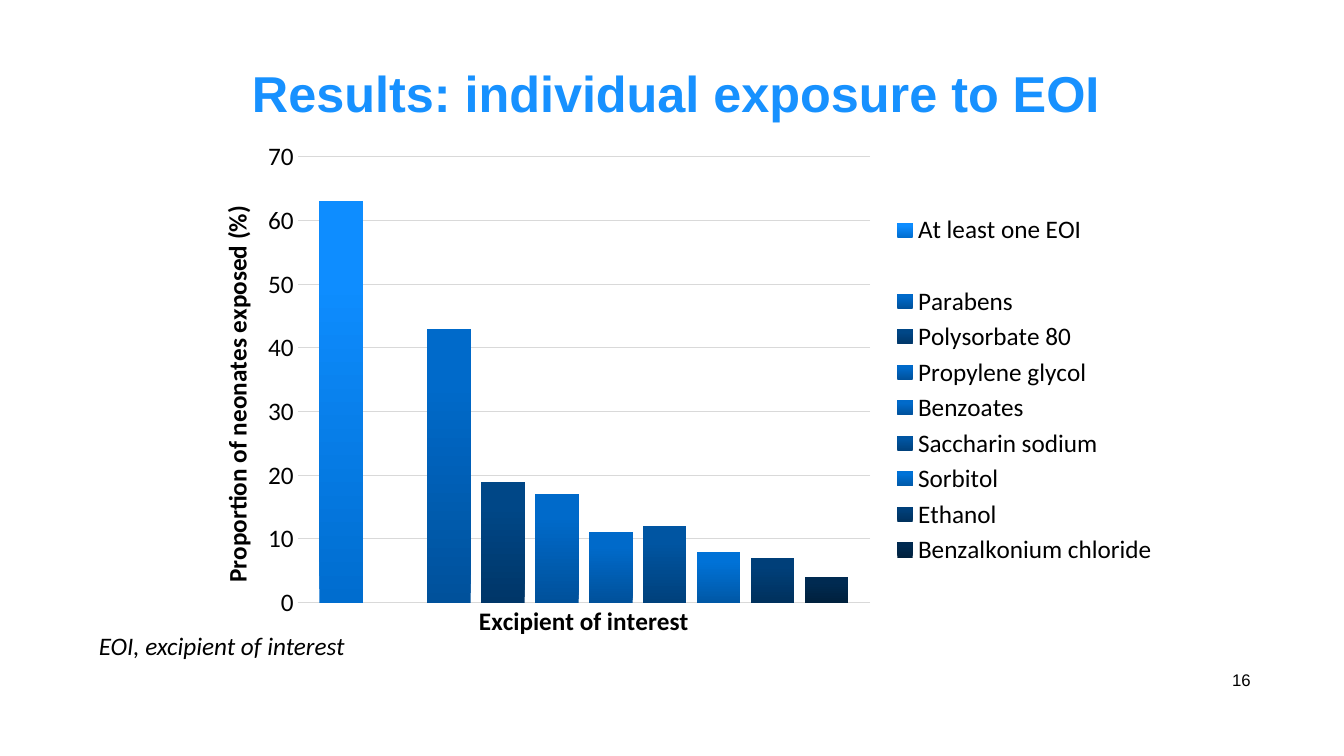
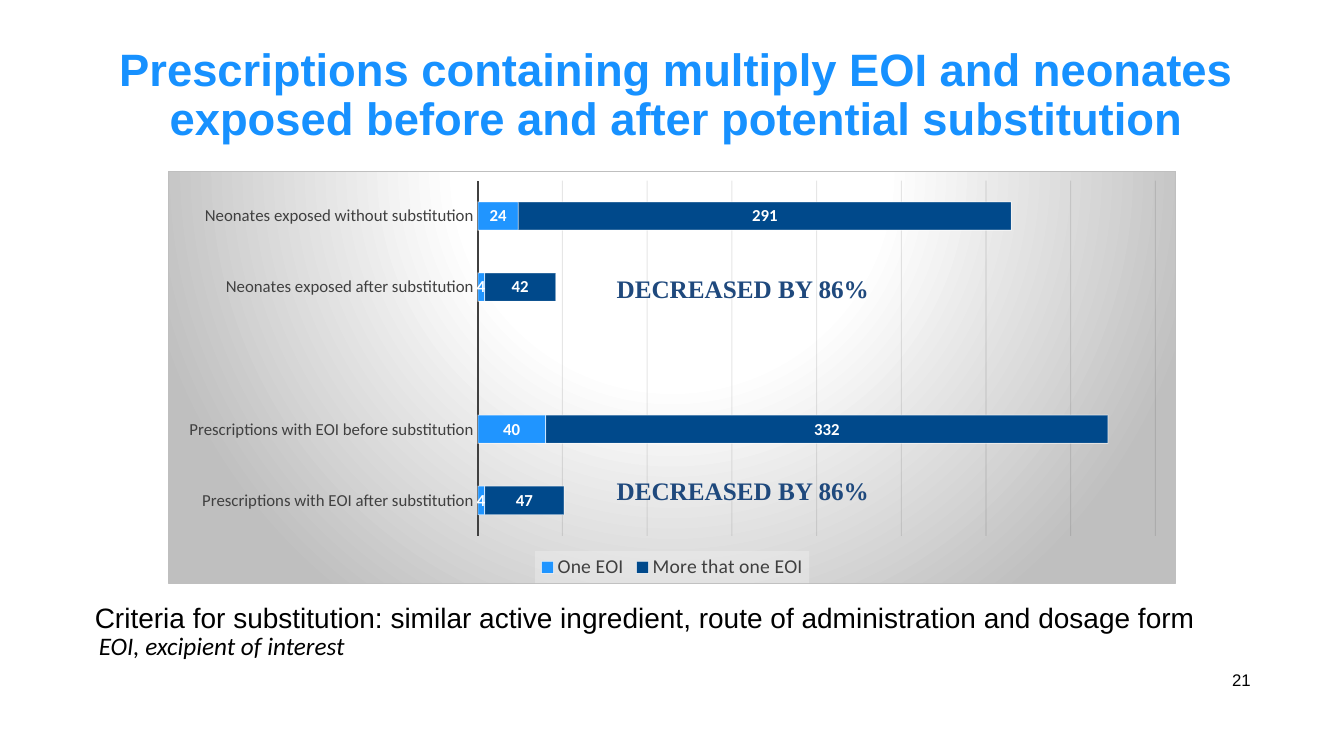
from lxml import etree
from pptx import Presentation
from pptx.chart.data import CategoryChartData
from pptx.dml.color import RGBColor
from pptx.enum.chart import (XL_CHART_TYPE, XL_LABEL_POSITION,
                             XL_LEGEND_POSITION, XL_TICK_MARK)
from pptx.enum.text import MSO_ANCHOR, MSO_AUTO_SIZE, PP_ALIGN
from pptx.oxml import parse_xml
from pptx.oxml.ns import nsdecls, qn
from pptx.util import Cm, Pt

COLUMN, STACKED = XL_CHART_TYPE.COLUMN_CLUSTERED, XL_CHART_TYPE.BAR_STACKED
RIGHT, BOTTOM = XL_LEGEND_POSITION.RIGHT, XL_LEGEND_POSITION.BOTTOM
MID_LABEL, NO_TICK = XL_LABEL_POSITION.CENTER, XL_TICK_MARK.NONE
MIDDLE, TOP = MSO_ANCHOR.MIDDLE, MSO_ANCHOR.TOP
NO_FIT = MSO_AUTO_SIZE.NONE
LEFT_AL, MID_AL, RIGHT_AL = PP_ALIGN.LEFT, PP_ALIGN.CENTER, PP_ALIGN.RIGHT

COLORS = {
    "title": "1791FF", "text": "000000", "label": "404040", "navy": "1F497D",
    "grid": "D9D9D9", "mesh": "0D0D0D", "edge": "BFBFBF", "pale": "F2F2F2",
    "white": "FFFFFF", "one": "2095FF", "more": "00498B",
}
MID_BLUE = ("00519B", "006ACA")
EXPOSED = [  # name, percent, bottom and top colour
    ("At least one EOI", 63, ("006DCF", "0E8DFF")),
    (" ", None, None),
    ("Parabens", 43, MID_BLUE),
    ("Polysorbate 80", 19, ("003668", "004787")),
    ("Propylene glycol", 17, MID_BLUE),
    ("Benzoates", 11, MID_BLUE),
    ("Saccharin sodium", 12, ("00417C", "0055A2")),
    ("Sorbitol", 8, ("0058A6", "0072D7")),
    ("Ethanol", 7, ("00315D", "003F79")),
    ("Benzalkonium chloride", 4, ("00213E", "002A51")),
]
GROUPS = [
    "Prescriptions with EOI after substitution",
    "Prescriptions with EOI before substitution",
    "",
    "Neonates exposed after substitution",
    "Neonates exposed without substitution",
]
COUNTS = [
    ("One EOI", [4, 40, None, 4, 24], "one"),
    ("More that one EOI", [47, 332, None, 42, 291], "more"),
]


def rgb(name):
    return RGBColor.from_string(COLORS[name])


def style(font, size, color="text", face="Calibri", bold=False, italic=False):
    font.name, font.size = face, Pt(size)
    font.bold, font.italic = bold, italic
    font.color.rgb = rgb(color)


def strip(frame):
    """Take away the insets and centre the text vertically."""
    frame.margin_left = frame.margin_right = 0
    frame.margin_top = frame.margin_bottom = 0
    frame.vertical_anchor = MIDDLE


def add_text(slide, text, box, size, align=LEFT_AL, **looks):
    frame = slide.shapes.add_textbox(*map(Cm, box)).text_frame
    frame.word_wrap = True
    frame.vertical_anchor = TOP
    para = frame.paragraphs[0]
    para.text, para.alignment = text, align
    style(para.font, size, **looks)
    return frame


def add_slide(deck, title, size, number):
    slide = deck.slides.add_slide(deck.slide_layouts[5])
    head = slide.shapes.title
    head.left, head.top = Cm(2.54), Cm(1.24)
    head.width, head.height = Cm(29), Cm(2.36)
    frame = head.text_frame
    frame.word_wrap, frame.auto_size = True, NO_FIT
    strip(frame)
    para = frame.paragraphs[0]
    para.text, para.alignment = title, MID_AL
    para.line_spacing = 0.9
    style(para.font, size, "title", "Arial", bold=True)
    strip(add_text(slide, number, (28.65, 16.61, 2.87, 1.02), 12,
                   RIGHT_AL, face="Arial"))
    return slide


def add_note(slide):
    add_text(slide, "EOI, excipient of interest", (2.24, 15.75, 9.6, 1.02),
             18, italic=True)


def place(part, **spots):
    """Fix a chart part at fractions of the chart's size."""
    old = part.find(qn("c:layout"))
    if old is None:
        old = etree.SubElement(part, qn("c:layout"))
        part.insert(0, old)
    for child in list(old):
        old.remove(child)
    manual = etree.SubElement(old, qn("c:manualLayout"))
    if "w" in spots:
        etree.SubElement(manual, qn("c:layoutTarget"), val="inner")
    for key in "xy":
        etree.SubElement(manual, qn(f"c:{key}Mode"), val="edge")
    for key, value in spots.items():
        etree.SubElement(manual, qn(f"c:{key}"), val=str(value))


def find(chart, *tags):
    return chart.element.find(".//" + "/".join(qn(tag) for tag in tags))


def fade(chart, tags, percent):
    """Make the line colours below the given tags see-through."""
    path = ".//" + "/".join(qn(tag) for tag in tags)
    for part in chart.element.iterfind(path):
        for color in part.iter(qn("a:srgbClr")):
            etree.SubElement(color, qn("a:alpha"), val=str(percent * 1000))


def set_back(text, inner):
    """Put shape properties before a chart part's text properties."""
    text.addprevious(parse_xml(
        f'<c:spPr {nsdecls("c", "a")}>{inner}</c:spPr>'))


def paint(color, percent=100):
    return (f'<a:solidFill><a:srgbClr val="{COLORS[color]}">'
            f'<a:alpha val="{percent * 1000}"/></a:srgbClr></a:solidFill>')


def add_chart(slide, kind, box, cats, rows, gap, overlap, legend, size):
    """Add a bar chart with what both charts have in common."""
    data = CategoryChartData()
    data.categories = cats
    for name, values, _ in rows:
        data.add_series(name, values)
    chart = slide.shapes.add_chart(kind, *map(Cm, box), data).chart
    chart.has_title = False
    style(chart.font, 10)
    plot = chart.plots[0]
    plot.gap_width, plot.overlap = gap, overlap
    plot.vary_by_categories = False
    chart.has_legend = True
    chart.legend.position = legend
    chart.legend.include_in_layout = False
    for axis in (chart.category_axis, chart.value_axis):
        axis.major_tick_mark = axis.minor_tick_mark = NO_TICK
    chart.value_axis.minimum_scale = 0
    chart.value_axis.has_major_gridlines = True
    style(chart.legend.font, size, "text" if legend == RIGHT else "label")
    return chart


def set_line(line, color, width=0.75):
    line.color.rgb, line.width = rgb(color), Pt(width)


def draw_exposure(slide):
    rows = [(name, [value], tones) for name, value, tones in EXPOSED]
    chart = add_chart(slide, COLUMN, (4.65, 3.33, 24.79, 13),
                      ["Excipient of interest"], rows, 100, -24, RIGHT, 18)
    place(find(chart, "c:plotArea"), x=0.115, y=0.048, w=0.582, h=0.864)
    for bar, (_, _, tones) in zip(chart.plots[0].series, rows):
        fill = bar.format.fill
        if not tones:
            fill.solid()
            fill.fore_color.rgb = rgb("white")
            continue
        fill.gradient()
        fill.gradient_angle = 90
        for stop, tone, spot in zip(fill.gradient_stops, tones, (0, 0.8)):
            stop.color.rgb = RGBColor.from_string(tone)
            stop.position = spot
    cat, val = chart.category_axis, chart.value_axis
    style(cat.tick_labels.font, 18, bold=True)
    set_line(cat.format.line, "grid")
    style(val.tick_labels.font, 18)
    val.maximum_scale, val.major_unit = 70, 10
    val.format.line.fill.background()
    set_line(val.major_gridlines.format.line, "grid")
    para = val.axis_title.text_frame.paragraphs[0]
    para.text = "Proportion of neonates exposed (%)"
    style(para.font, 18, bold=True)
    name = find(chart, "c:valAx", "c:title")
    body = name.find(".//" + qn("a:bodyPr"))
    body.set("rot", "-5400000")
    body.set("vert", "horz")
    place(name, x=0.031, y=0.134)


def draw_counts(slide):
    chart = add_chart(slide, STACKED, (4.24, 4.32, 25.4, 10.39),
                      GROUPS, COUNTS, 150, 100, BOTTOM, 14)
    place(find(chart, "c:plotArea"), x=0.307, y=0.021, w=0.673, h=0.864)
    for bar, (_, _, color) in zip(chart.plots[0].series, COUNTS):
        bar.format.fill.solid()
        bar.format.fill.fore_color.rgb = rgb(color)
        set_line(bar.format.line, "white")
        labels = bar.data_labels
        labels.show_value, labels.position = True, MID_LABEL
        style(labels.font, 12, "white", bold=True)
    cat, val = chart.category_axis, chart.value_axis
    style(cat.tick_labels.font, 12, "label")
    set_line(cat.format.line, "label", 1.5)
    val.maximum_scale, val.major_unit = 400, 50
    val.visible = False
    set_line(val.major_gridlines.format.line, "mesh")
    fade(chart, ("c:ser", "c:spPr", "a:ln"), 50)
    fade(chart, ("c:majorGridlines",), 10)
    stops = "".join(
        f'<a:gs pos="{spot * 1000}"><a:srgbClr val="{COLORS[color]}"/></a:gs>'
        for spot, color in ((0, "white"), (39, "white"), (100, "edge")))
    set_back(chart.element.find(qn("c:txPr")),
             f'<a:gradFill><a:gsLst>{stops}</a:gsLst><a:path path="circle">'
             '<a:fillToRect l="50000" t="-80000" r="50000" b="180000"/>'
             f'</a:path></a:gradFill><a:ln w="9525">{paint("edge")}</a:ln>')
    set_back(find(chart, "c:legend", "c:txPr"), paint("pale", 39))


def main():
    deck = Presentation()
    deck.slide_width, deck.slide_height = Cm(33.87), Cm(19.05)

    slide = add_slide(deck, "Results: individual exposure to EOI", 36, "16")
    draw_exposure(slide)
    add_note(slide)

    slide = add_slide(deck, "Prescriptions containing multiply EOI and neonates "
                      "exposed before and after potential substitution",
                      32.4, "21")
    draw_counts(slide)
    add_text(slide, "Criteria for substitution: similar active ingredient, "
             "route of administration and dosage form",
             (1.96, 15.01, 28.6, 1.12), 20, MID_AL, face="Arial")
    add_note(slide)
    for top in (6.76, 11.86):
        add_text(slide, "DECREASED BY 86%", (15.29, top, 9.04, 1.02), 18,
                 color="navy", face="Times New Roman", bold=True)

    deck.save("out.pptx")


if __name__ == "__main__":
    main()
